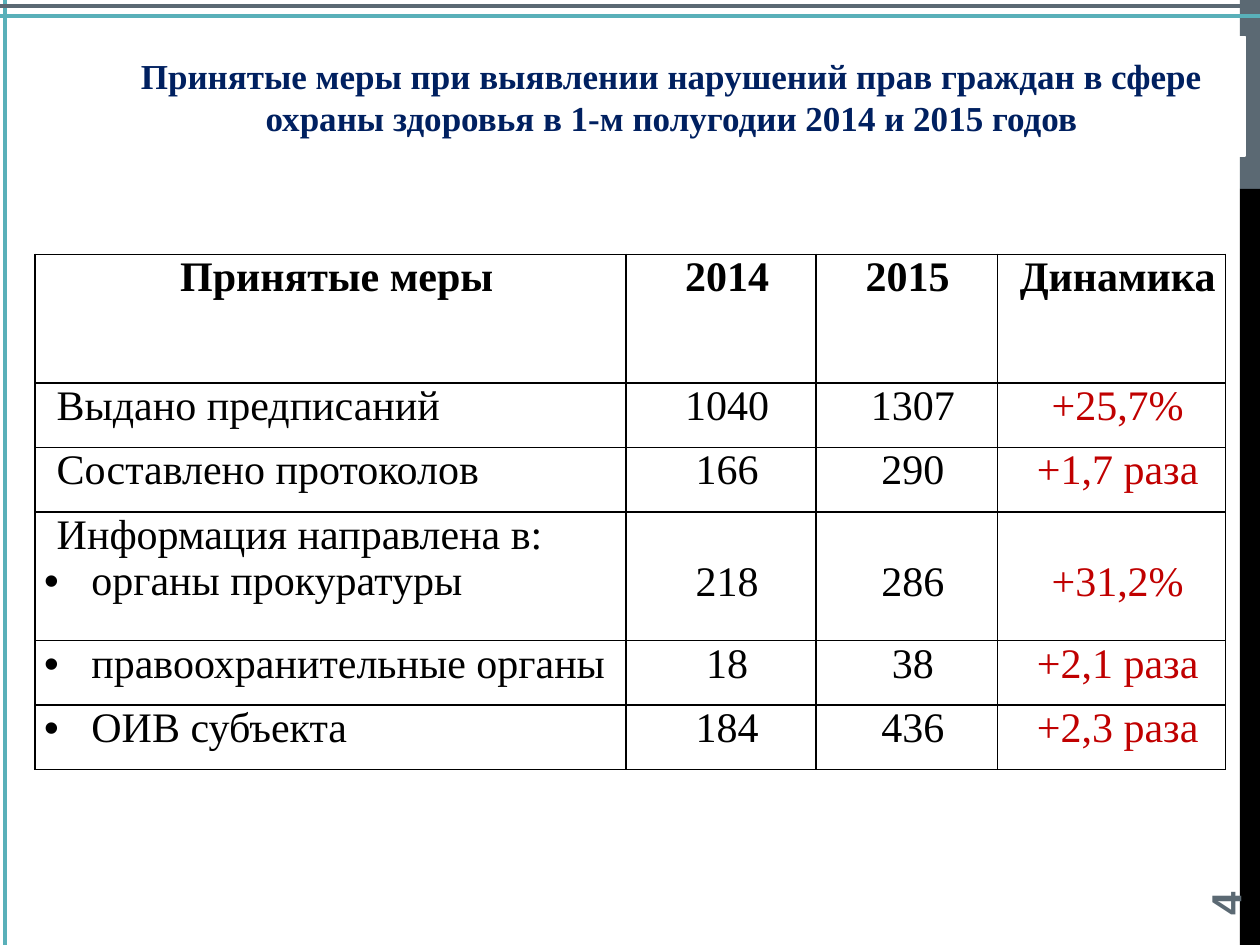
from dataclasses import dataclass

from lxml import etree
from pptx import Presentation
from pptx.dml.color import RGBColor
from pptx.enum.shapes import MSO_CONNECTOR, MSO_SHAPE
from pptx.enum.text import MSO_ANCHOR, MSO_AUTO_SIZE, PP_ALIGN
from pptx.oxml.ns import qn
from pptx.util import Pt

RECT = MSO_SHAPE.RECTANGLE
STRAIGHT = MSO_CONNECTOR.STRAIGHT
MIDDLE = MSO_ANCHOR.MIDDLE
CENTER, LEFT = PP_ALIGN.CENTER, PP_ALIGN.LEFT
NO_FIT = MSO_AUTO_SIZE.NONE

WIDTH, HEIGHT = 720, 540
SLATE, TEAL, BLACK, WHITE = "5B6973", "59B0B9", "000000", "FFFFFF"
NAVY, RED = "002060", "C00000"
SERIF, SANS = "Times New Roman", "Arial"
LINE_HEIGHT = 27
BULLET = "• "


@dataclass
class Bar:
    top: float
    height: float
    color: str


@dataclass
class Rule:
    x1: float
    y1: float
    x2: float
    y2: float
    color: str


@dataclass
class Measure:
    labels: list[str]
    values: list[str]


BARS = [Bar(0, 108, SLATE), Bar(108, 432, BLACK)]
RULES = [
    Rule(WIDTH, 9.2, 0, 9.2, TEAL),
    Rule(2.8, 0, 2.8, HEIGHT, TEAL),
    Rule(0, 3.4, WIDTH, 3.4, SLATE),
]
HEADER = ["Принятые меры", "2014", "2015 ", "Динамика"]
MEASURES = [
    Measure(["Выдано предписаний"], ["1040", "1307", "+25,7%"]),
    Measure(["Составлено протоколов"], ["166", "290", "+1,7 раза"]),
    Measure(["Информация направлена в:", BULLET + "органы прокуратуры"],
            ["218", "286", "+31,2%"]),
    Measure([BULLET + "правоохранительные органы"], ["18", "38", "+2,1 раза"]),
    Measure([BULLET + "ОИВ субъекта"], ["184", "436", "+2,3 раза"]),
]
COLUMNS = [337.6, 108.6, 103.8, 130.2]
ROW = 36.8


def rgb(color: str) -> RGBColor:
    return RGBColor.from_string(color)


def write(p, text: str, *, size=24, font=SERIF, color=BLACK, bold=False, align=LEFT):
    p.alignment = align
    r = p.add_run()
    r.text = text
    r.font.name, r.font.size, r.font.bold = font, Pt(size), bold
    r.font.color.rgb = rgb(color)


def add_bar(s, bar: Bar):
    sp = s.shapes.add_shape(RECT, Pt(708.5), Pt(bar.top), Pt(11.5), Pt(bar.height))
    sp.shadow.inherit = False
    sp.fill.solid()
    sp.fill.fore_color.rgb = rgb(bar.color)
    sp.line.fill.background()


def add_rule(s, rule: Rule):
    line = s.shapes.add_connector(
        STRAIGHT, Pt(rule.x1), Pt(rule.y1), Pt(rule.x2), Pt(rule.y2))
    line.line.color.rgb = rgb(rule.color)
    line.line.width = Pt(2.25)
    etree.SubElement(line.element.spPr, qn("a:effectLst"))


def add_title(s, text: str):
    sp = s.shapes.title
    sp.left, sp.top, sp.width, sp.height = Pt(56), Pt(20.7), Pt(655.5), Pt(68.4)
    sp.fill.solid()
    sp.fill.fore_color.rgb = rgb(WHITE)
    sp.line.color.rgb = rgb(WHITE)
    sp.line.width = Pt(0.75)
    tf = sp.text_frame
    tf.word_wrap, tf.auto_size, tf.vertical_anchor = True, NO_FIT, MIDDLE
    write(tf.paragraphs[0], text, size=20, color=NAVY, bold=True, align=CENTER)
    # Bring the title in front of the side bar
    s.shapes.element.append(sp.element)


def add_page_number(s, text: str):
    sp = s.shapes.add_textbox(Pt(648), Pt(463.7), Pt(103.7), Pt(28.8))
    sp.rotation = 270
    tf = sp.text_frame
    tf.word_wrap, tf.vertical_anchor = True, MIDDLE
    write(tf.paragraphs[0], text, font=SANS, color=SLATE, bold=True)


def indent(p, bulleted: bool):
    pPr = p._p.get_or_add_pPr()
    margin, first = (27, -27) if bulleted else (0, 7.2)
    pPr.set("marL", str(Pt(margin)))
    pPr.set("indent", str(Pt(first)))
    if bulleted:
        etree.SubElement(pPr, qn("a:buFont"), typeface=SANS)
        etree.SubElement(pPr, qn("a:buChar"), char=BULLET.strip())


def add_borders(cell):
    tcPr = cell._tc.get_or_add_tcPr()
    for side in ("lnL", "lnR", "lnT", "lnB"):
        ln = etree.SubElement(tcPr, qn(f"a:{side}"), w=str(Pt(1)))
        fill = etree.SubElement(ln, qn("a:solidFill"))
        etree.SubElement(fill, qn("a:srgbClr"), val=BLACK)


def fill_cell(cell, lines: list[str], *, skipped_lines=0, **fmt):
    add_borders(cell)
    cell.fill.background()
    cell.margin_left = cell.margin_right = Pt(5.2)
    cell.margin_top, cell.margin_bottom = Pt(skipped_lines * LINE_HEIGHT), 0
    tf = cell.text_frame
    for i, text in enumerate(lines):
        p = tf.add_paragraph() if i else tf.paragraphs[0]
        indent(p, text.startswith(BULLET))
        write(p, text.removeprefix(BULLET), **fmt)


def add_measures_table(s):
    heights = [2 * ROW] + [ROW * len(m.labels) for m in MEASURES]
    table = s.shapes.add_table(len(heights), len(COLUMNS), Pt(20), Pt(145.3),
                               Pt(sum(COLUMNS)), Pt(sum(heights))).table
    table.first_row = table.horz_banding = False
    for column, width in zip(table.columns, COLUMNS):
        column.width = Pt(width)
    for row, height in zip(table.rows, heights):
        row.height = Pt(height)

    for c, text in enumerate(HEADER):
        fill_cell(table.cell(0, c), [text], bold=True, align=CENTER)
    for r, measure in enumerate(MEASURES, 1):
        fill_cell(table.cell(r, 0), measure.labels)
        for c, value in enumerate(measure.values, 1):
            fill_cell(table.cell(r, c), [value], align=CENTER,
                      skipped_lines=len(measure.labels) - 1,
                      color=RED if c == len(measure.values) else BLACK)


def main():
    prs = Presentation()
    prs.slide_width, prs.slide_height = Pt(WIDTH), Pt(HEIGHT)
    s = prs.slides.add_slide(prs.slide_layouts[5])

    # Frame
    for bar in BARS:
        add_bar(s, bar)
    for rule in RULES:
        add_rule(s, rule)

    # Content
    add_page_number(s, "4")
    add_title(s, "Принятые меры при выявлении нарушений прав граждан в сфере "
                 "охраны здоровья в 1-м полугодии 2014 и 2015 годов")
    add_measures_table(s)
    prs.save("out.pptx")


if __name__ == "__main__":
    main()
